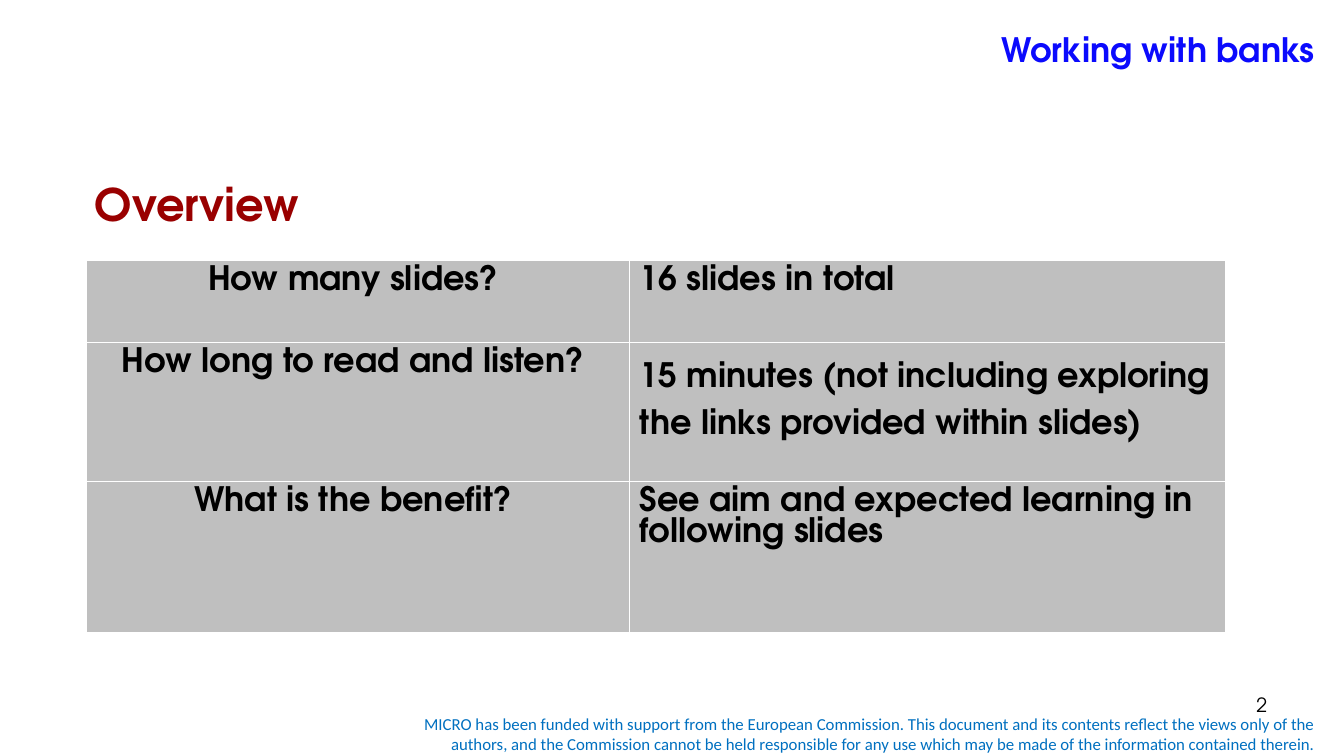
from dataclasses import dataclass

from lxml.etree import SubElement
from pptx import Presentation
from pptx.dml.color import RGBColor
from pptx.enum.text import MSO_ANCHOR, PP_ALIGN
from pptx.oxml.ns import qn
from pptx.util import Pt


@dataclass(frozen=True)
class Theme:
    heading_font: str = "TeX Gyre Adventor"
    notice_font: str = "Calibri"
    title_color: str = "0B0AFD"
    section_color: str = "990000"
    notice_color: str = "0070C0"
    text_color: str = "000000"
    cell_fill: str = "BFBFBF"
    border_color: str = "FFFFFF"
    section_size: int = 32
    body_size: int = 24
    number_size: int = 14
    notice_size: int = 12
    border_width: int = 1


THEME = Theme()
SLIDE_SIZE = (960, 540)
COLUMN_WIDTHS = (388.3, 425.7)
ROWS = (
    (58.5, "How many slides? ", "16 slides in total", 1.0),
    (99.7, "How long to read and listen? ",
     "15 minutes (not including exploring the links provided within slides)", 1.5),
    (108, "What is the benefit? ",
     "See aim and expected learning in following slides", 1.0),
)
NOTICE = (
    "MICRO has been funded with support from the European Commission. "
    "This document and its contents reflect the views only of the authors, "
    "and the Commission cannot be held responsible for any use which may be "
    "made of the information contained therein."
)


def write(para, text, size, color, font=THEME.heading_font, bold=False,
          align=PP_ALIGN.LEFT):
    para.alignment = align
    span = para.add_run()
    span.text = text
    span.font.name = font
    span.font.size = Pt(size)
    span.font.bold = bold
    span.font.color.rgb = RGBColor.from_string(color)


def add_text(page, box, text, size, color, anchor=MSO_ANCHOR.TOP,
             bottom_inset=3.6, **style):
    frame = page.shapes.add_textbox(*map(Pt, box)).text_frame
    frame.word_wrap = True
    frame.vertical_anchor = anchor
    frame.margin_bottom = Pt(bottom_inset)
    write(frame.paragraphs[0], text, size, color, **style)


def add_borders(cell):
    """Draw the four edges, which must precede the fill in the cell's XML."""
    properties = cell._tc.get_or_add_tcPr()
    for edge in ("a:lnL", "a:lnR", "a:lnT", "a:lnB"):
        line = SubElement(properties, qn(edge), w=str(Pt(THEME.border_width)))
        fill = SubElement(line, qn("a:solidFill"))
        SubElement(fill, qn("a:srgbClr"), val=THEME.border_color)


def fill_cell(cell, text, align, spacing):
    add_borders(cell)
    cell.fill.solid()
    cell.fill.fore_color.rgb = RGBColor.from_string(THEME.cell_fill)
    para = cell.text_frame.paragraphs[0]
    para.line_spacing = spacing
    write(para, text, THEME.body_size, THEME.text_color, bold=True, align=align)


def add_overview_table(page, left, top):
    width = sum(COLUMN_WIDTHS)
    height = sum(row[0] for row in ROWS)
    table = page.shapes.add_table(
        len(ROWS), len(COLUMN_WIDTHS), Pt(left), Pt(top), Pt(width), Pt(height)
    ).table
    table.first_row = False
    table.horz_banding = False
    for column, column_width in zip(table.columns, COLUMN_WIDTHS):
        column.width = Pt(column_width)
    for index, (row_height, question, answer, spacing) in enumerate(ROWS):
        table.rows[index].height = Pt(row_height)
        fill_cell(table.cell(index, 0), question, PP_ALIGN.CENTER, 1.0)
        fill_cell(table.cell(index, 1), answer, PP_ALIGN.LEFT, spacing)


def add_header(page, box):
    add_text(page, box, "Working with banks", THEME.body_size, THEME.title_color,
             anchor=MSO_ANCHOR.MIDDLE, bottom_inset=24, bold=True,
             align=PP_ALIGN.RIGHT)


def add_overview(page, box):
    left, top, width, _ = box
    add_text(page, (left, top, width, 46), "Overview", THEME.section_size,
             THEME.section_color, bold=True)
    add_overview_table(page, left + 1, top + 63)


def add_footer(page, box):
    left, top, width, height = box
    add_text(page, (left, top + 14.5, width, height - 14.5), NOTICE,
             THEME.notice_size, THEME.notice_color, font=THEME.notice_font,
             anchor=MSO_ANCHOR.MIDDLE, align=PP_ALIGN.RIGHT)
    add_text(page, (left + width - 258.5, top, 224, 37), "2", THEME.number_size,
             THEME.text_color, align=PP_ALIGN.RIGHT)


def main():
    deck = Presentation()
    deck.slide_width, deck.slide_height = map(Pt, SLIDE_SIZE)
    page = deck.slides.add_slide(deck.slide_layouts[6])
    add_header(page, (82, 0, 864, 90))
    add_overview(page, (60.5, 123, 815, 330))
    add_footer(page, (270, 491.7, 676.8, 50.5))
    deck.save("out.pptx")


if __name__ == "__main__":
    main()
